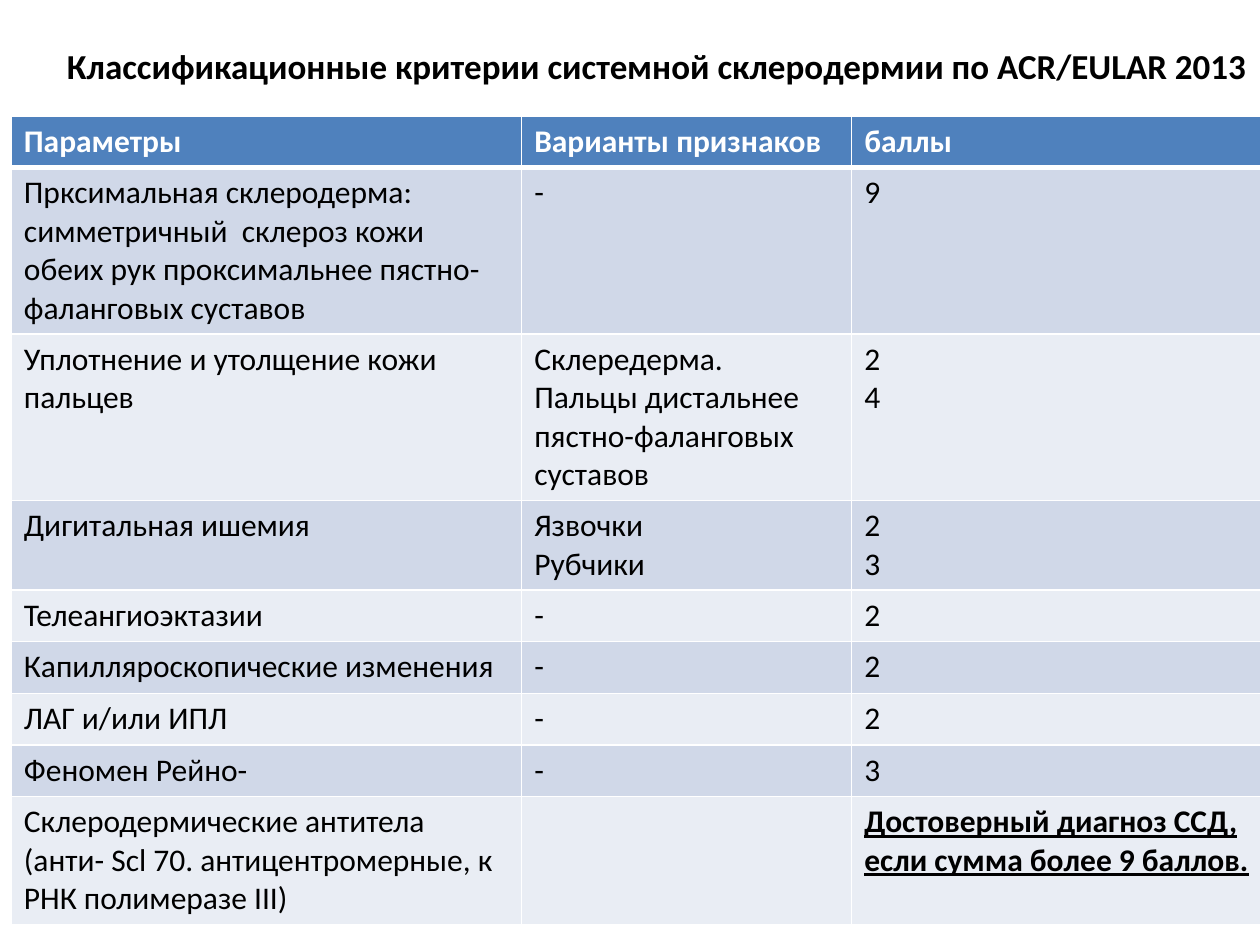
from dataclasses import dataclass

from lxml import etree
from pptx import Presentation
from pptx import util as u
from pptx.dml.color import RGBColor
from pptx.enum import text
from pptx.oxml.ns import qn

FONT = "Calibri"
WHITE, BLACK = "FFFFFF", "000000"
HEADER_FILL = "4F81BD"
BAND_FILLS = ("E9EDF4", "D0D8E8")
COLUMN_WIDTHS = (4.05, 2.62, 3.33)
ROW_HEIGHT = 0.41


@dataclass
class Criterion:
    parameter: str
    variants: tuple[str, ...] = ("-",)
    points: tuple[str, ...] = ()
    conclusion: bool = False


CRITERIA = [
    Criterion("Прксимальная склеродерма: симметричный  склероз кожи обеих рук "
              "проксимальнее пястно-фаланговых суставов", points=("9",)),
    Criterion("Уплотнение и утолщение кожи пальцев",
              ("Склередерма.", "Пальцы дистальнее пястно-фаланговых суставов"),
              ("2", "4")),
    Criterion("Дигитальная ишемия", ("Язвочки", "Рубчики"), ("2", "3")),
    Criterion("Телеангиоэктазии", points=("2",)),
    Criterion("Капилляроскопические изменения", points=("2",)),
    Criterion("ЛАГ и/или ИПЛ", points=("2",)),
    Criterion("Феномен Рейно-", points=("3",)),
    Criterion("Склеродермические антитела (анти- Scl 70. антицентромерные, "
              "к РНК полимеразе III)", (),
              ("Достоверный диагноз ССД, если сумма более 9 баллов.",), True),
]


def rgb(value: str) -> RGBColor:
    return RGBColor.from_string(value)


def add_run(paragraph, words: str, size: float, color: str,
            bold: bool = False, underline: bool = False) -> None:
    run = paragraph.add_run()
    run.text = words
    font = run.font
    font.name, font.size = FONT, u.Pt(size)
    font.bold, font.underline = bold, underline
    font.color.rgb = rgb(color)


def set_borders(cell, top: float = 1, bottom: float = 1) -> None:
    """White cell borders; the line elements must precede the fill."""
    properties = cell._tc.get_or_add_tcPr()
    widths = {"lnL": 1, "lnR": 1, "lnT": top, "lnB": bottom}
    for index, (side, width) in enumerate(widths.items()):
        line = etree.Element(qn(f"a:{side}"), w=str(u.Pt(width)))
        fill = etree.SubElement(line, qn("a:solidFill"))
        etree.SubElement(fill, qn("a:srgbClr"), val=WHITE)
        properties.insert(index, line)


def fill_cell(cell, lines: tuple[str, ...], fill: str, color: str = BLACK,
              bold: bool = False, underline: bool = False) -> None:
    cell.fill.solid()
    cell.fill.fore_color.rgb = rgb(fill)
    frame = cell.text_frame
    for index, words in enumerate(lines):
        paragraph = frame.add_paragraph() if index else frame.paragraphs[0]
        add_run(paragraph, words, 18, color, bold, underline)


def add_title(slide) -> None:
    title = slide.shapes.title
    title.left, title.top = u.Inches(0.43), u.Inches(0.01)
    title.width, title.height = u.Inches(9.57), u.Inches(1.02)
    title.text_frame.vertical_anchor = text.MSO_ANCHOR.MIDDLE
    heading = title.text_frame.paragraphs[0]
    heading.alignment = text.PP_ALIGN.CENTER
    add_run(heading, "Классификационные критерии системной склеродермии "
            "по ACR/EULAR 2013", 20, BLACK, bold=True)


def add_criteria_table(slide) -> None:
    row_count = len(CRITERIA) + 1
    table = slide.shapes.add_table(
        row_count, len(COLUMN_WIDTHS), u.Inches(0.09), u.Inches(0.92),
        u.Inches(sum(COLUMN_WIDTHS)), u.Inches(ROW_HEIGHT * row_count)).table
    for column, width in zip(table.columns, COLUMN_WIDTHS):
        column.width = u.Inches(width)

    # Header row, set off by a thicker line below
    for column, heading in enumerate(("Параметры", "Варианты признаков", "баллы")):
        cell = table.cell(0, column)
        fill_cell(cell, (heading,), HEADER_FILL, WHITE, bold=True)
        set_borders(cell, bottom=3)

    # Banded criteria rows
    for row, item in enumerate(CRITERIA, start=1):
        for column, lines in enumerate(((item.parameter,), item.variants, item.points)):
            cell = table.cell(row, column)
            strong = item.conclusion and column == 2
            fill_cell(cell, lines, BAND_FILLS[row % 2], bold=strong, underline=strong)
            set_borders(cell, top=3 if row == 1 else 1)


def main() -> None:
    deck = Presentation()
    deck.slide_width, deck.slide_height = u.Inches(10), u.Inches(7.5)
    slide = deck.slides.add_slide(deck.slide_layouts[5])
    add_title(slide)
    add_criteria_table(slide)
    deck.save("out.pptx")


if __name__ == "__main__":
    main()
